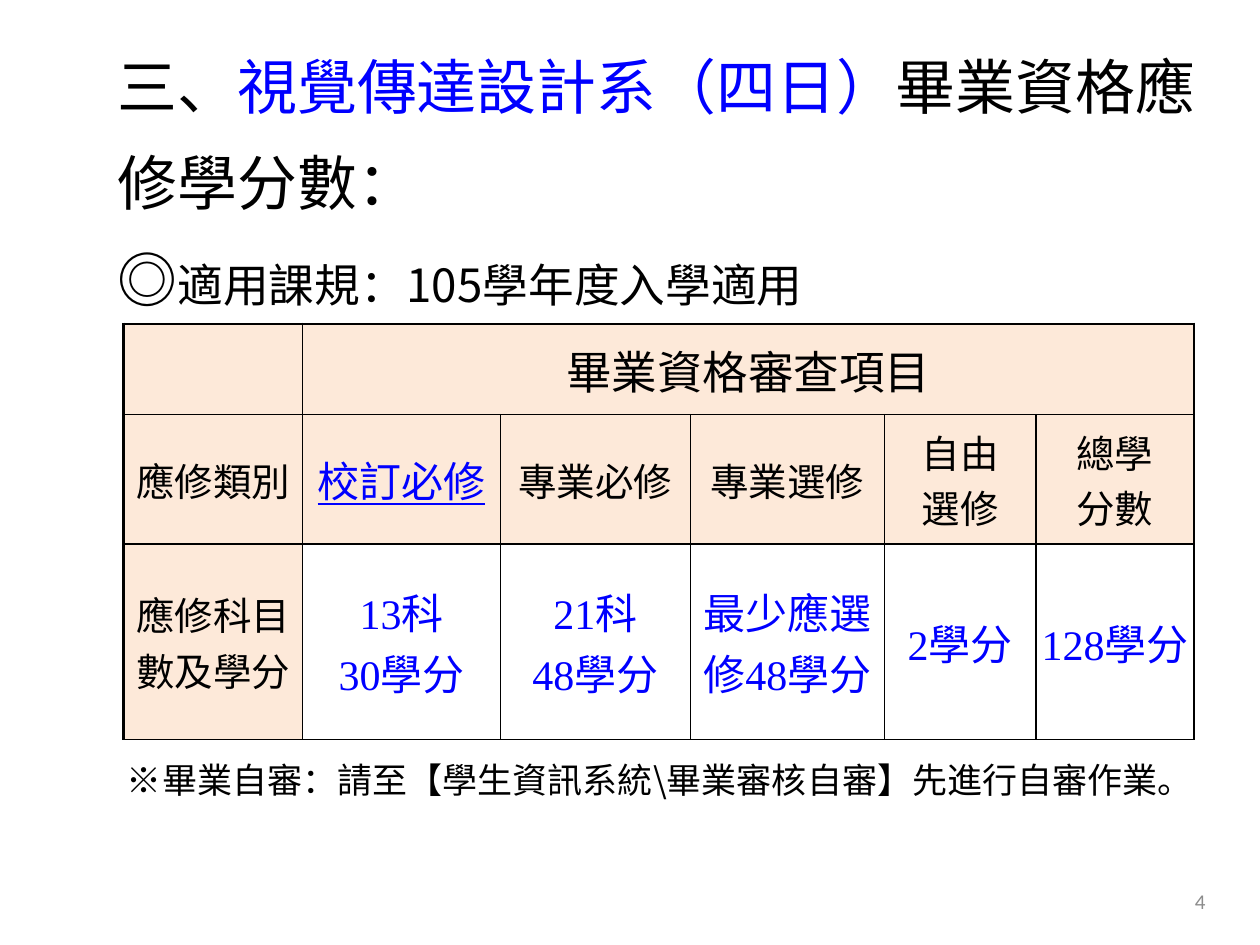
from lxml import etree
from pptx import Presentation
from pptx.dml.color import RGBColor
from pptx.enum.text import MSO_ANCHOR, MSO_AUTO_SIZE, PP_ALIGN
from pptx.oxml.ns import qn
from pptx.util import Pt

COLORS = {"ink": "000000", "blue": "0000FF", "peach": "FDE9D9", "gray": "8C8C8C"}
SANS, SERIF = "Noto Sans CJK SC", "Times New Roman"
COLS = [102.5, 113, 108.5, 111, 86.5, 90.5]
ROWS = [52, 74, 94]
CELLS = [
    ["", "畢業資格審查項目", "", "", "", ""],
    ["應修類別", "校訂必修", "專業必修", "專業選修", "自由\n選修", "總學\n分數"],
    ["應修科目數及學分", "13科\n30學分", "21科\n48學分", "最少應選修48學分", "2學分", "128學分"],
]


def rgb(name):
    return RGBColor.from_string(COLORS[name])


def add_run(para, words, size, color="ink", latin=SANS, asian=SANS, **extra):
    run = para.add_run()
    run.text = words
    run.font.color.rgb = rgb(color)
    for key, value in {"size": Pt(size), "name": latin, **extra}.items():
        setattr(run.font, key, value)
    props = run.font._element
    props.find(qn("a:latin")).addnext(
        props.makeelement(qn("a:ea"), {"typeface": asian}))


def set_frame(frame, **extra):
    values = {"word_wrap": True, "auto_size": MSO_AUTO_SIZE.NONE,
              "vertical_anchor": MSO_ANCHOR.MIDDLE, **extra}
    for key, value in values.items():
        setattr(frame, key, value)


def fill_title(title):
    for key, value in dict(left=60, top=38, width=636, height=118).items():
        setattr(title, key, Pt(value))
    set_frame(title.text_frame)
    para = title.text_frame.paragraphs[0]
    para.alignment = PP_ALIGN.LEFT
    para.line_spacing = Pt(55)
    face = "Noto Sans CJK JP"
    for words, color in [("三、", "ink"), ("視覺傳達設計系（四日）", "blue"),
                         ("畢業資格應修學分數：", "ink")]:
        add_run(para, words, 34.2, color, face, face)
    para.add_line_break()
    add_run(para, "◎", 34.2, "ink", face, face)
    add_run(para, "適用課規：105學年度入學適用", 26.1)


def add_label(slide, box, words, size, color, face, align, **extra):
    frame = slide.shapes.add_textbox(*map(Pt, box)).text_frame
    set_frame(frame, **extra)
    frame.paragraphs[0].alignment = align
    add_run(frame.paragraphs[0], words, size, color, face)


def set_edges(cell, widths):
    """Draw the borders; widths are in points, in the order L, R, T, B."""
    props = cell._tc.get_or_add_tcPr()
    for spot, (side, width) in enumerate(zip("LRTB", widths)):
        line = props.makeelement(qn(f"a:ln{side}"), {"w": str(Pt(width))})
        fill = etree.SubElement(line, qn("a:solidFill"))
        etree.SubElement(fill, qn("a:srgbClr"), val=COLORS["ink"])
        props.insert(spot, line)


def cell_font(row, col):
    if row == 0:
        return {"size": 26}
    if (row, col) == (1, 1):
        return {"size": 24, "color": "blue", "underline": True}
    if row == 2 and col > 0:
        return {"size": 24, "color": "blue"}
    return {"size": 22}


def fill_cell(cell, row, col):
    last = len(COLS) - 1
    if row < 2 or col == 0:
        cell.fill.solid()
        cell.fill.fore_color.rgb = rgb("peach")
    else:
        cell.fill.background()
    set_edges(cell, [1.5 if col == 0 else 1, 1.5 if col == last else 1,
                     1.5 if row == 0 else 1, 1])
    cell.vertical_anchor = MSO_ANCHOR.MIDDLE
    if col == last and row > 0:
        for side in ("left", "right", "top", "bottom"):
            setattr(cell, f"margin_{side}", 0)
    if not CELLS[row][col]:
        return
    frame = cell.text_frame
    for index, words in enumerate(CELLS[row][col].split("\n")):
        para = frame.add_paragraph() if index else frame.paragraphs[0]
        para.alignment = PP_ALIGN.CENTER
        add_run(para, words, latin=SERIF, **cell_font(row, col))


def add_grid(slide):
    box = map(Pt, (70.5, 185, sum(COLS), sum(ROWS)))
    table = slide.shapes.add_table(len(ROWS), len(COLS), *box).table
    table.first_row = table.horz_banding = False
    for col, width in zip(table.columns, COLS):
        col.width = Pt(width)
    for row, height in zip(table.rows, ROWS):
        row.height = Pt(height)
    table.cell(0, 1).merge(table.cell(0, len(COLS) - 1))
    for row in range(len(ROWS)):
        for col in range(len(COLS)):
            fill_cell(table.cell(row, col), row, col)


def main():
    deck = Presentation()
    deck.slide_width, deck.slide_height = Pt(720), Pt(540)
    slide = deck.slides.add_slide(deck.slide_layouts[5])
    fill_title(slide.shapes.title)
    add_label(slide, (65.5, 428.5, 623.5, 34),
              "※畢業自審：請至【學生資訊系統\\畢業審核自審】先進行自審作業。",
              20, "ink", SANS, PP_ALIGN.LEFT, margin_right=0)
    add_grid(slide)
    add_label(slide, (528, 500.5, 168, 29), "4", 12, "gray", "Calibri", PP_ALIGN.RIGHT)
    deck.save("out.pptx")


if __name__ == "__main__":
    main()
